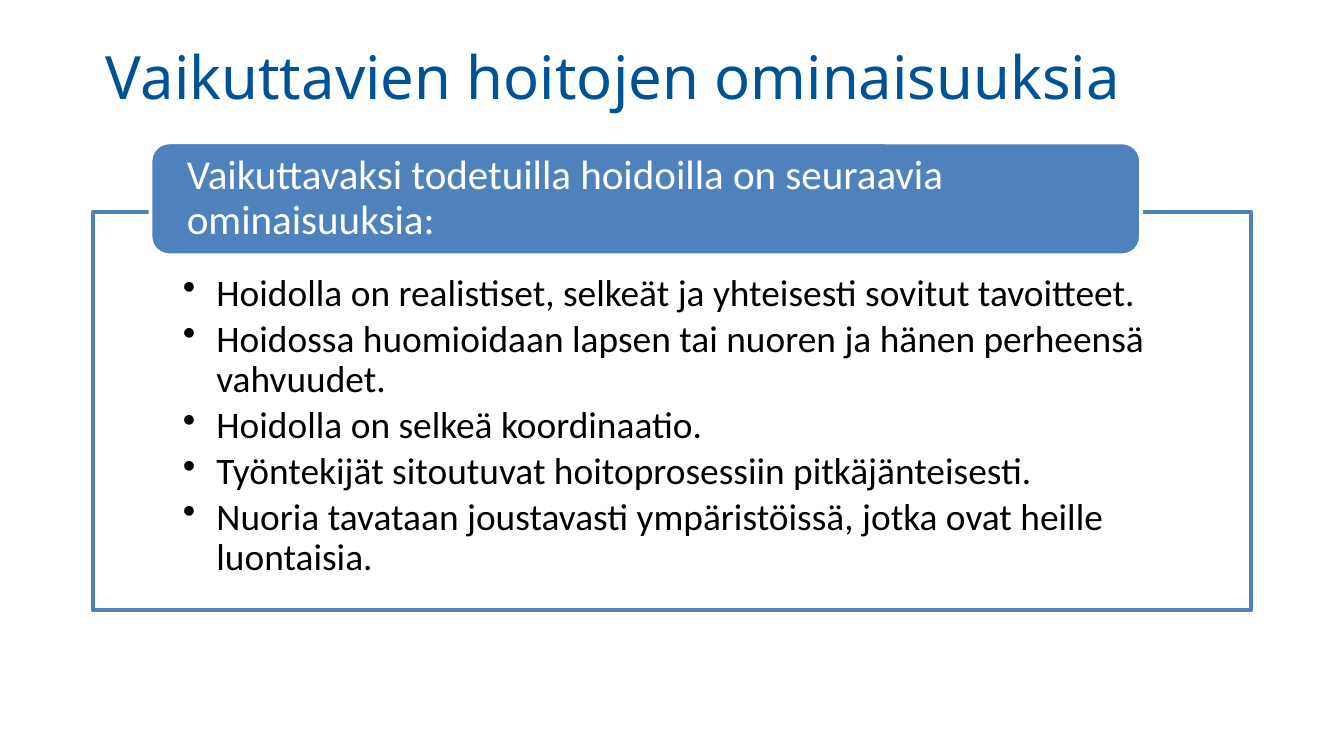
from lxml import etree
from pptx import Presentation
from pptx.dml.color import RGBColor
from pptx.enum import shapes, text
from pptx.oxml import ns
from pptx.util import Inches, Pt

HUES = {"title": "005296", "blue": "4F81BD", "white": "FFFFFF", "black": "000000"}
TITLE = "Vaikuttavien hoitojen ominaisuuksia"
HEAD = "Vaikuttavaksi todetuilla hoidoilla on seuraavia ominaisuuksia:"
ITEMS = [
    "Hoidolla on realistiset, selkeät ja yhteisesti sovitut tavoitteet.",
    "Hoidossa huomioidaan lapsen tai nuoren ja hänen perheensä vahvuudet.",
    "Hoidolla on selkeä koordinaatio.",
    "Työntekijät sitoutuvat hoitoprosessiin pitkäjänteisesti.",
    "Nuoria tavataan joustavasti ympäristöissä, jotka ovat heille luontaisia.",
]


def hue(name):
    return RGBColor.from_string(HUES[name])


def assign(item, values):
    for key, value in values.items():
        setattr(item, key, value)


def set_frame(frame, inset, anchor):
    sides = ("margin_left", "margin_top", "margin_right", "margin_bottom")
    assign(frame, {side: Inches(size) for side, size in zip(sides, inset)})
    assign(frame, {"word_wrap": True, "vertical_anchor": anchor})


def set_font(para, face, size, color):
    for run in para.runs:
        assign(run.font, {"name": face, "size": Pt(size)})
        run.font.color.rgb = hue(color)


def add_bullet(para):
    props = para._p.get_or_add_pPr()
    props.set("marL", str(Inches(0.25)))
    props.set("indent", str(Inches(-0.25)))
    etree.SubElement(props, ns.qn("a:buChar"), char="•")


def add_panel(slide, kind, box, fill, line):
    panel = slide.shapes.add_shape(kind, *map(Inches, box))
    panel.shadow.inherit = False
    panel.fill.solid()
    panel.fill.fore_color.rgb = hue(fill)
    panel.line.color.rgb = hue(line)
    panel.line.width = Pt(2)
    return panel


def add_title(slide, box):
    frame = slide.shapes.add_textbox(*map(Inches, box)).text_frame
    set_frame(frame, (0.1, 0.04, 0.1, 0.06), text.MSO_ANCHOR.MIDDLE)
    para = frame.paragraphs[0]
    para.text = TITLE
    set_font(para, "Noto Sans", 32, "title")


def add_body(slide, box):
    panel = add_panel(slide, shapes.MSO_SHAPE.RECTANGLE, box, "white", "blue")
    frame = panel.text_frame
    set_frame(frame, (0.67, 0.46, 0.67, 0.16), text.MSO_ANCHOR.TOP)
    frame.text = "\n".join(ITEMS)
    for para in frame.paragraphs:
        add_bullet(para)
        assign(para, {"level": 1, "line_spacing": 0.9, "space_after": Pt(3),
                      "alignment": text.PP_ALIGN.LEFT})
        set_font(para, "Calibri", 20, "black")


def add_head(slide, box):
    panel = add_panel(slide, shapes.MSO_SHAPE.ROUNDED_RECTANGLE, box, "blue", "white")
    frame = panel.text_frame
    set_frame(frame, (0.23, 0, 0.23, 0), text.MSO_ANCHOR.MIDDLE)
    para = frame.paragraphs[0]
    para.text = HEAD
    assign(para, {"line_spacing": 0.9, "alignment": text.PP_ALIGN.LEFT})
    set_font(para, "Calibri", 22, "white")


def add_list(slide, box):
    left, top, width, height = box
    tall = 0.84
    drop = 0.52
    add_body(slide, (left, top + drop, width, height - drop))
    add_head(slide, (left + 0.43, top, 7.37, tall))


def main():
    deck = Presentation()
    wide = Inches(10)
    assign(deck, {"slide_width": wide, "slide_height": wide * 9 // 16})
    slide = deck.slides.add_slide(deck.slide_layouts[6])
    add_title(slide, (0.69, 0.24, 8.62, 0.66))
    add_list(slide, (0.69, 1.06, 8.62, 3.48))
    deck.save("out.pptx")


if __name__ == "__main__":
    main()
